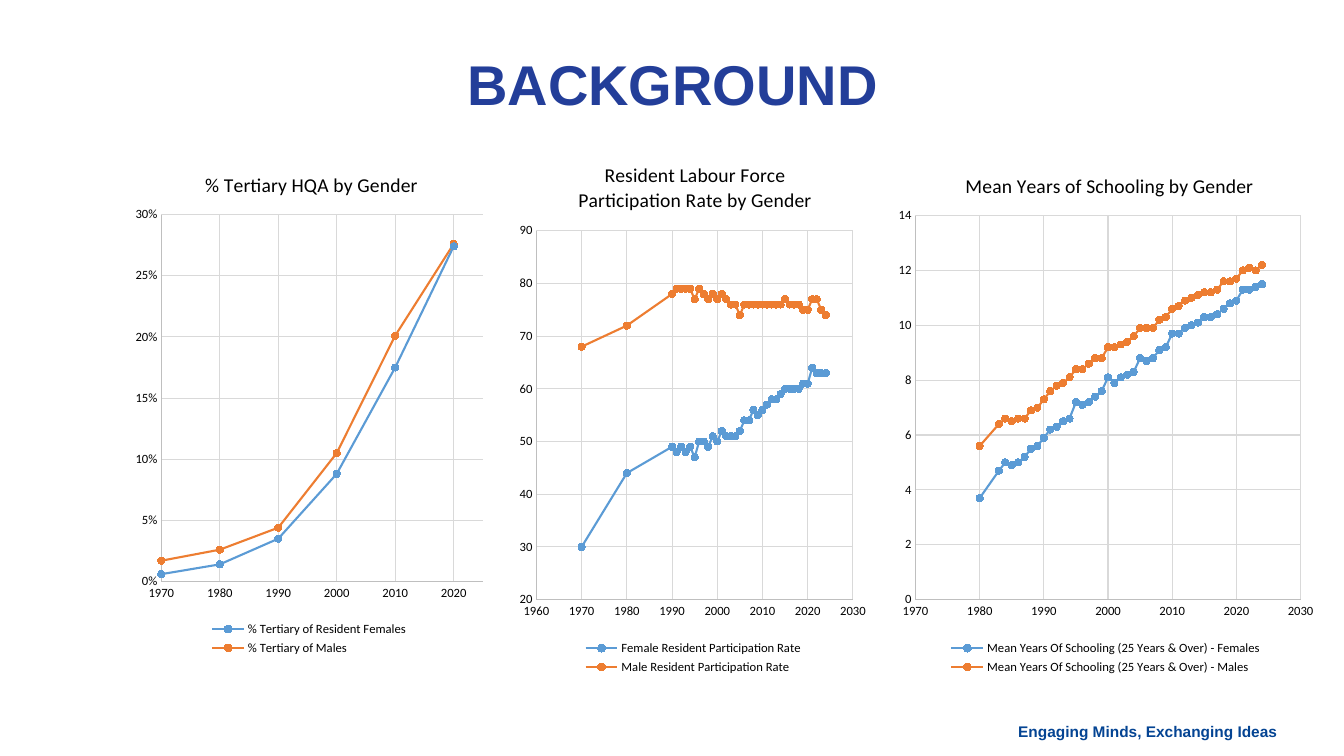
from dataclasses import dataclass

import pptx
import pptx.chart.data
import pptx.dml.color
import pptx.enum.chart
import pptx.enum.text
import pptx.oxml
import pptx.util
from pptx.util import Inches


@dataclass(frozen=True)
class Theme:
    heading_font: str = "Arial"
    chart_font: str = "Calibri"
    heading: str = "233E99"
    slogan: str = "044493"
    text: str = "000000"
    axis: str = "BFBFBF"
    grid: str = "D9D9D9"
    female: str = "5B9BD5"
    male: str = "ED7D31"
    heading_size: float = 40
    slogan_size: float = 11
    chart_title_size: float = 14
    label_size: float = 9
    series_width: float = 1.5
    rule_width: float = 0.75
    marker_size: int = 5


@dataclass(frozen=True)
class Area:
    """Left, top, width and height in inches."""
    left: float
    top: float
    width: float
    height: float


@dataclass(frozen=True)
class Scale:
    low: float
    high: float
    step: float
    number_format: str = "General"


@dataclass(frozen=True)
class GenderChart:
    title: str
    area: Area
    plot: Area
    title_left: float
    title_top: float
    year_scale: Scale
    value_scale: Scale
    years: list[int]
    female_name: str
    female: list[float]
    male_name: str
    male: list[float]


THEME = Theme()

CHARTS = [
    GenderChart(
        "% Tertiary HQA by Gender",
        Area(1.27, 1.45, 3.59, 5.09), Area(1.6, 2.13, 3.19, 3.64), 2.0, 1.66,
        Scale(1970, 2025, 10), Scale(0, 0.3, 0.05, "0%"),
        list(range(1970, 2021, 10)),
        "% Tertiary of Resident Females",
        [0.006, 0.014, 0.035, 0.088, 0.175, 0.274],
        "% Tertiary of Males",
        [0.017, 0.026, 0.044, 0.105, 0.201, 0.276],
    ),
    GenderChart(
        "Resident Labour Force Participation Rate by Gender",
        Area(5.08, 1.36, 3.59, 5.37), Area(5.32, 2.29, 3.14, 3.66), 5.7, 1.57,
        Scale(1960, 2030, 10), Scale(20, 90, 10),
        [*range(2024, 1989, -1), 1980, 1970],
        "Female Resident Participation Rate",
        [63, 63, 63, 64, 61, 61, 60, 60, 60, 60, 59, 58, 58, 57, 56, 55, 56, 54, 54,
         52, 51, 51, 51, 52, 50, 51, 49, 50, 50, 47, 49, 48, 49, 48, 49, 44, 30],
        "Male Resident Participation Rate",
        [74, 75, 77, 77, 75, 75, 76, 76, 76, 77, 76, 76, 76, 76, 76, 76, 76, 76, 76,
         74, 76, 76, 77, 78, 77, 78, 77, 78, 79, 77, 79, 79, 79, 79, 78, 72, 68],
    ),
    GenderChart(
        "Mean Years of Schooling by Gender",
        Area(8.82, 1.45, 4.29, 5.28), Area(9.08, 2.14, 3.82, 3.81), 9.54, 1.67,
        Scale(1970, 2030, 10), Scale(0, 14, 2),
        [*range(2024, 1982, -1), 1980],
        "Mean Years Of Schooling (25 Years & Over) - Females",
        [11.5, 11.4, 11.3, 11.3, 10.9, 10.8, 10.6, 10.4, 10.3, 10.3, 10.1, 10, 9.9, 9.7,
         9.7, 9.2, 9.1, 8.8, 8.7, 8.8, 8.3, 8.2, 8.1, 7.9, 8.1, 7.6, 7.4, 7.2, 7.1,
         7.2, 6.6, 6.5, 6.3, 6.2, 5.9, 5.6, 5.5, 5.2, 5, 4.9, 5, 4.7, 3.7],
        "Mean Years Of Schooling (25 Years & Over) - Males",
        [12.2, 12, 12.1, 12, 11.7, 11.6, 11.6, 11.3, 11.2, 11.2, 11.1, 11, 10.9, 10.7,
         10.6, 10.3, 10.2, 9.9, 9.9, 9.9, 9.6, 9.4, 9.3, 9.2, 9.2, 8.8, 8.8, 8.6, 8.4,
         8.4, 8.1, 7.9, 7.8, 7.6, 7.3, 7, 6.9, 6.6, 6.6, 6.5, 6.6, 6.4, 5.6],
    ),
]


def rgb(value: str) -> pptx.dml.color.RGBColor:
    return pptx.dml.color.RGBColor.from_string(value)


def style_font(font, name: str, size: float, color: str, bold: bool = False) -> None:
    font.name, font.size, font.bold = name, pptx.util.Pt(size), bold
    font.color.rgb = rgb(color)


def style_line(line, color: str, width: float) -> None:
    line.color.rgb = rgb(color)
    line.width = pptx.util.Pt(width)


def add_text(page, area: Area, text: str, size: float, color: str, alignment) -> None:
    box = page.shapes.add_textbox(
        Inches(area.left), Inches(area.top), Inches(area.width), Inches(area.height))
    frame = box.text_frame
    frame.word_wrap = True
    frame.vertical_anchor = pptx.enum.text.MSO_ANCHOR.MIDDLE
    para = frame.paragraphs[0]
    para.alignment = alignment
    span = para.add_run()
    span.text = text
    style_font(span.font, THEME.heading_font, size, color, bold=True)


def set_layout(parent, settings: dict) -> None:
    """Give a chart part a manual position, as fractions of the chart."""
    for old in parent.xpath("c:layout"):
        parent.remove(old)
    items = "".join(f'<c:{key} val="{value}"/>' for key, value in settings.items())
    layout = pptx.oxml.parse_xml(
        '<c:layout xmlns:c="http://schemas.openxmlformats.org/drawingml/2006/chart">'
        f"<c:manualLayout>{items}</c:manualLayout></c:layout>")
    parent.insert(len(parent.xpath("c:tx")), layout)


def style_axis(axis, scale: Scale) -> None:
    axis.minimum_scale, axis.maximum_scale = scale.low, scale.high
    axis.major_unit = scale.step
    axis.major_tick_mark = axis.minor_tick_mark = pptx.enum.chart.XL_TICK_MARK.NONE
    axis.has_major_gridlines = True
    style_line(axis.major_gridlines.format.line, THEME.grid, THEME.rule_width)
    style_line(axis.format.line, THEME.axis, THEME.rule_width)
    labels = axis.tick_labels
    labels.number_format, labels.number_format_is_linked = scale.number_format, False
    style_font(labels.font, THEME.chart_font, THEME.label_size, THEME.text)


def add_gender_chart(page, item: GenderChart) -> None:
    data = pptx.chart.data.XyChartData(number_format=item.value_scale.number_format)
    for name, values in ((item.female_name, item.female), (item.male_name, item.male)):
        points = data.add_series(name)
        for year, value in zip(item.years, values):
            points.add_data_point(year, value)
    area, plot = item.area, item.plot
    chart = page.shapes.add_chart(
        pptx.enum.chart.XL_CHART_TYPE.XY_SCATTER_LINES, Inches(area.left),
        Inches(area.top), Inches(area.width), Inches(area.height), data).chart
    style_font(chart.font, THEME.chart_font, THEME.label_size, THEME.text)

    # Chart title
    chart.has_title = True
    span = chart.chart_title.text_frame.paragraphs[0].add_run()
    span.text = item.title
    style_font(span.font, THEME.chart_font, THEME.chart_title_size, THEME.text)
    set_layout(chart.chart_title._element, {
        "xMode": "edge", "yMode": "edge",
        "x": (item.title_left - area.left) / area.width,
        "y": (item.title_top - area.top) / area.height})

    # Plot area and axes
    set_layout(chart._chartSpace.chart.plotArea, {
        "layoutTarget": "inner", "xMode": "edge", "yMode": "edge",
        "x": (plot.left - area.left) / area.width,
        "y": (plot.top - area.top) / area.height,
        "w": plot.width / area.width, "h": plot.height / area.height})
    style_axis(chart.category_axis, item.year_scale)
    style_axis(chart.value_axis, item.value_scale)

    # Series
    chart.plots[0].vary_by_categories = False
    for series, color in zip(chart.plots[0].series, (THEME.female, THEME.male)):
        series.smooth = False
        style_line(series.format.line, color, THEME.series_width)
        series.marker.style = pptx.enum.chart.XL_MARKER_STYLE.CIRCLE
        series.marker.size = THEME.marker_size
        series.marker.format.fill.solid()
        series.marker.format.fill.fore_color.rgb = rgb(color)
        style_line(series.marker.format.line, color, THEME.rule_width)

    # Legend
    chart.has_legend = True
    chart.legend.position = pptx.enum.chart.XL_LEGEND_POSITION.BOTTOM
    chart.legend.include_in_layout = False
    style_font(chart.legend.font, THEME.chart_font, THEME.label_size, THEME.text)


def main() -> None:
    deck = pptx.Presentation()
    deck.slide_width, deck.slide_height = Inches(13.33), Inches(7.5)
    page = deck.slides.add_slide(deck.slide_layouts[6])
    align = pptx.enum.text.PP_ALIGN
    add_text(page, Area(9.97, 7.11, 2.8, 0.29), "Engaging Minds, Exchanging Ideas",
             THEME.slogan_size, THEME.slogan, align.RIGHT)
    add_text(page, Area(1.27, 0.48, 10.8, 0.68), "BACKGROUND",
             THEME.heading_size, THEME.heading, align.CENTER)
    for item in CHARTS:
        add_gender_chart(page, item)
    deck.save("out.pptx")


if __name__ == "__main__":
    main()
